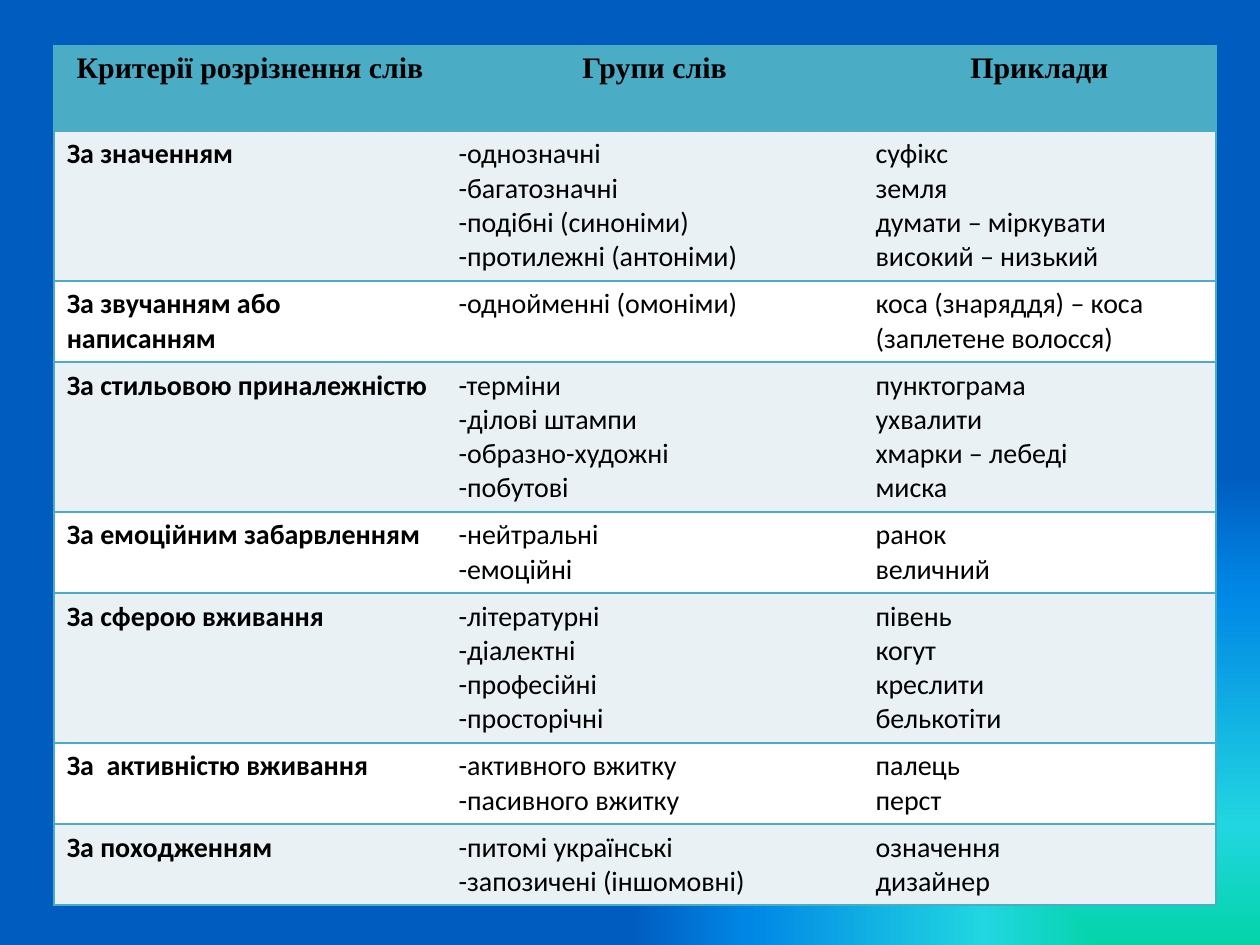
from lxml import etree
from pptx import Presentation
from pptx.dml.color import RGBColor
from pptx.enum import text
from pptx.oxml import ns
from pptx.util import Inches, Pt

TEAL = RGBColor(0x4B, 0xAC, 0xC6)
PALE = RGBColor(0xE9, 0xF1, 0xF5)
WHITE = RGBColor(255, 255, 255)
BLACK = RGBColor(0, 0, 0)
STOPS = [
    (0, RGBColor(0x03, 0xD4, 0xA8)),
    (25, RGBColor(0x21, 0xD6, 0xE0)),
    (75, RGBColor(0x00, 0x87, 0xE6)),
    (100, RGBColor(0x00, 0x5C, 0xBF)),
]
WIDTHS = [3.11, 3.31, 2.8]
HEADS = ["Критерії розрізнення слів", "Групи слів", "Приклади"]
ROWS = [
    ("За значенням",
     "-однозначні\n-багатозначні\n-подібні (синоніми)\n-протилежні (антоніми)",
     "суфікс\nземля\nдумати – міркувати\nвисокий – низький"),
    ("За звучанням або написанням",
     "-однойменні (омоніми)",
     "коса (знаряддя) – коса (заплетене волосся)"),
    ("За стильовою приналежністю",
     "-терміни\n-ділові штампи\n-образно-художні\n-побутові",
     "пунктограма\nухвалити\nхмарки – лебеді\nмиска"),
    ("За емоційним забарвленням",
     "-нейтральні\n-емоційні",
     "ранок\nвеличний"),
    ("За сферою вживання",
     "-літературні\n-діалектні\n-професійні\n-просторічні",
     "півень\nкогут\nкреслити\nбелькотіти"),
    ("За  активністю вживання",
     "-активного вжитку\n-пасивного вжитку",
     "палець\nперст"),
    ("За походженням",
     "-питомі українські\n-запозичені (іншомовні)",
     "означення\nдизайнер"),
]


def sub(parent, tag, **attrs):
    """Add an XML child with attributes."""
    return etree.SubElement(parent, ns.qn(tag), attrs)


def paint(slide):
    """Fill the background with a gradient from the lower right corner."""
    slide.background.fill.solid()
    old = slide.element.find(".//" + ns.qn("p:bgPr"))[0]
    grad = etree.Element(ns.qn("a:gradFill"), rotWithShape="1")
    stops = sub(grad, "a:gsLst")
    for pos, color in STOPS:
        stop = sub(stops, "a:gs", pos=str(pos * 1000))
        sub(stop, "a:srgbClr", val=str(color))
    way = sub(grad, "a:path", path="rect")
    sub(way, "a:fillToRect", l="100000", t="100000")
    old.getparent().replace(old, grad)


def write(frame, words, size=16, face="Calibri", bold=False,
          align=text.PP_ALIGN.LEFT, color=BLACK):
    """Write one paragraph per line in a single format."""
    frame.text = words
    for para in frame.paragraphs:
        para.alignment = align
        for run in para.runs:
            font = run.font
            font.size, font.name, font.bold = Pt(size), face, bold
            font.color.rgb = color


def edge(cell, sides):
    """Draw teal lines on the given sides and clear the others."""
    props = cell._tc.get_or_add_tcPr()
    for i, side in enumerate("LRTB"):
        line = etree.Element(ns.qn("a:ln" + side), w=str(Pt(1)))
        if side in sides:
            sub(sub(line, "a:solidFill"), "a:srgbClr", val=str(TEAL))
        else:
            sub(line, "a:noFill")
        props.insert(i, line)


def chart_words(slide, left, top, width):
    """Place the table of word groups in the given box."""
    tall = [0.68] + [1.19 if "\n" in r[1] and r[1].count("\n") == 3 else 0.64
                     for r in ROWS]
    table = slide.shapes.add_table(
        len(tall), len(WIDTHS), Inches(left), Inches(top),
        Inches(width), Inches(sum(tall))).table
    table.first_row = table.horz_banding = False
    for col, wide in zip(table.columns, WIDTHS):
        col.width = Inches(wide * width / sum(WIDTHS))
    for i, words in enumerate([HEADS] + ROWS):
        table.rows[i].height = Inches(tall[i])
        for j, word in enumerate(words):
            cell = table.cell(i, j)
            cell.fill.solid()
            if i == 0:
                cell.fill.fore_color.rgb = TEAL
                write(cell.text_frame, word, size=17, bold=True,
                      face="Times New Roman", align=text.PP_ALIGN.CENTER)
            else:
                cell.fill.fore_color.rgb = PALE if i % 2 else WHITE
                write(cell.text_frame, word, bold=j == 0)
            edge(cell, ["LTB", "TB", "RTB"][j])


def main():
    """Build and save the slide."""
    deck = Presentation()
    deck.slide_width, deck.slide_height = Inches(10), Inches(7.5)
    slide = deck.slides.add_slide(deck.slide_layouts[6])
    paint(slide)
    chart_words(slide, 0.43, 0.36, 9.22)
    deck.save("out.pptx")


if __name__ == "__main__":
    main()
